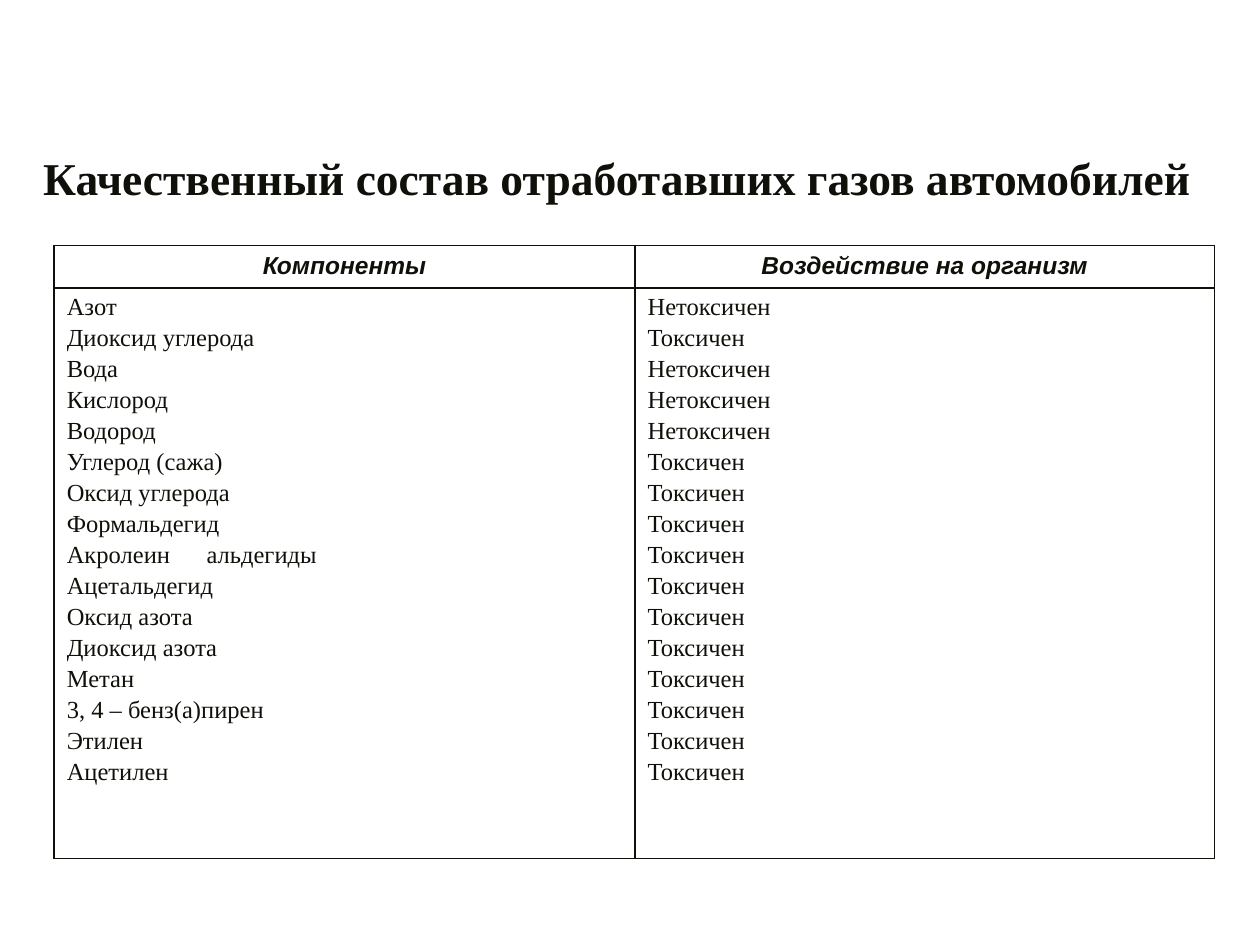
"""Build a slide with a table of the components of vehicle exhaust gases."""
from lxml.etree import SubElement
from pptx import Presentation
from pptx.dml.color import RGBColor
from pptx.enum.text import MSO_ANCHOR, PP_ALIGN
from pptx.oxml.ns import qn
from pptx.util import Inches, Pt

INK = RGBColor(0x10, 0x10, 0x0A)
WHITE = RGBColor(0xFF, 0xFF, 0xFF)

HEADINGS = ["Компоненты", "Воздействие на организм"]
EFFECTS = [
    ("Азот", "Нетоксичен"),
    ("Диоксид углерода", "Токсичен"),
    ("Вода", "Нетоксичен"),
    ("Кислород", "Нетоксичен"),
    ("Водород", "Нетоксичен"),
    ("Углерод (сажа)", "Токсичен"),
    ("Оксид углерода", "Токсичен"),
    ("Формальдегид", "Токсичен"),
    ("Акролеин\tальдегиды", "Токсичен"),
    ("Ацетальдегид", "Токсичен"),
    ("Оксид азота", "Токсичен"),
    ("Диоксид азота", "Токсичен"),
    ("Метан", "Токсичен"),
    ("3, 4 – бенз(а)пирен", "Токсичен"),
    ("Этилен", "Токсичен"),
    ("Ацетилен", "Токсичен"),
]


def style_text(paragraph, font_name, size, bold=False, italic=False):
    for run in paragraph.runs:
        run.font.name = font_name
        run.font.size = Pt(size)
        run.font.bold = bold
        run.font.italic = italic
        run.font.color.rgb = INK


def add_borders(cell):
    properties = cell._tc.get_or_add_tcPr()
    for side in ("a:lnL", "a:lnR", "a:lnT", "a:lnB"):
        border = SubElement(properties, qn(side), w=str(Pt(1)))
        fill = SubElement(border, qn("a:solidFill"))
        SubElement(fill, qn("a:srgbClr"), val=str(INK))


prs = Presentation()
prs.slide_width = Inches(10)
prs.slide_height = Inches(7.5)
slide = prs.slides.add_slide(prs.slide_layouts[6])
slide.background.fill.solid()
slide.background.fill.fore_color.rgb = WHITE

title = slide.shapes.add_textbox(Inches(-0.43), Inches(1.15), Inches(10.79), Inches(0.52))
title.text_frame.word_wrap = True
title.text_frame.vertical_anchor = MSO_ANCHOR.MIDDLE
title.text_frame.margin_right = Inches(0.23)
title.text_frame.text = "Качественный состав отработавших газов автомобилей"
title.text_frame.paragraphs[0].alignment = PP_ALIGN.CENTER
style_text(title.text_frame.paragraphs[0], "Times New Roman", 26, bold=True)

components = slide.shapes.add_table(
    2, 2, Inches(0.43), Inches(1.95), Inches(9.21), Inches(4.86)
).table
components.columns[0].width = Inches(4.61)
components.columns[1].width = Inches(4.6)
components.rows[0].height = Inches(0.33)
components.rows[1].height = Inches(4.53)

for column, (heading, entries) in enumerate(zip(HEADINGS, zip(*EFFECTS))):
    header, body = components.cell(0, column), components.cell(1, column)
    for cell in (header, body):
        add_borders(cell)
        cell.fill.solid()
        cell.fill.fore_color.rgb = WHITE

    header.text_frame.text = heading
    header.text_frame.paragraphs[0].alignment = PP_ALIGN.CENTER
    style_text(header.text_frame.paragraphs[0], "Arial", 14, bold=True, italic=True)

    body.text_frame.text = "\n".join(entries)
    for index, entry in enumerate(body.text_frame.paragraphs):
        if index:
            entry.space_before = Pt(2.2)
        if "\t" in entry.text:
            tabs = SubElement(entry._p.get_or_add_pPr(), qn("a:tabLst"))
            SubElement(tabs, qn("a:tab"), pos=str(Inches(1.11)), algn="l")
        style_text(entry, "Times New Roman", 14)

prs.save("out.pptx")
